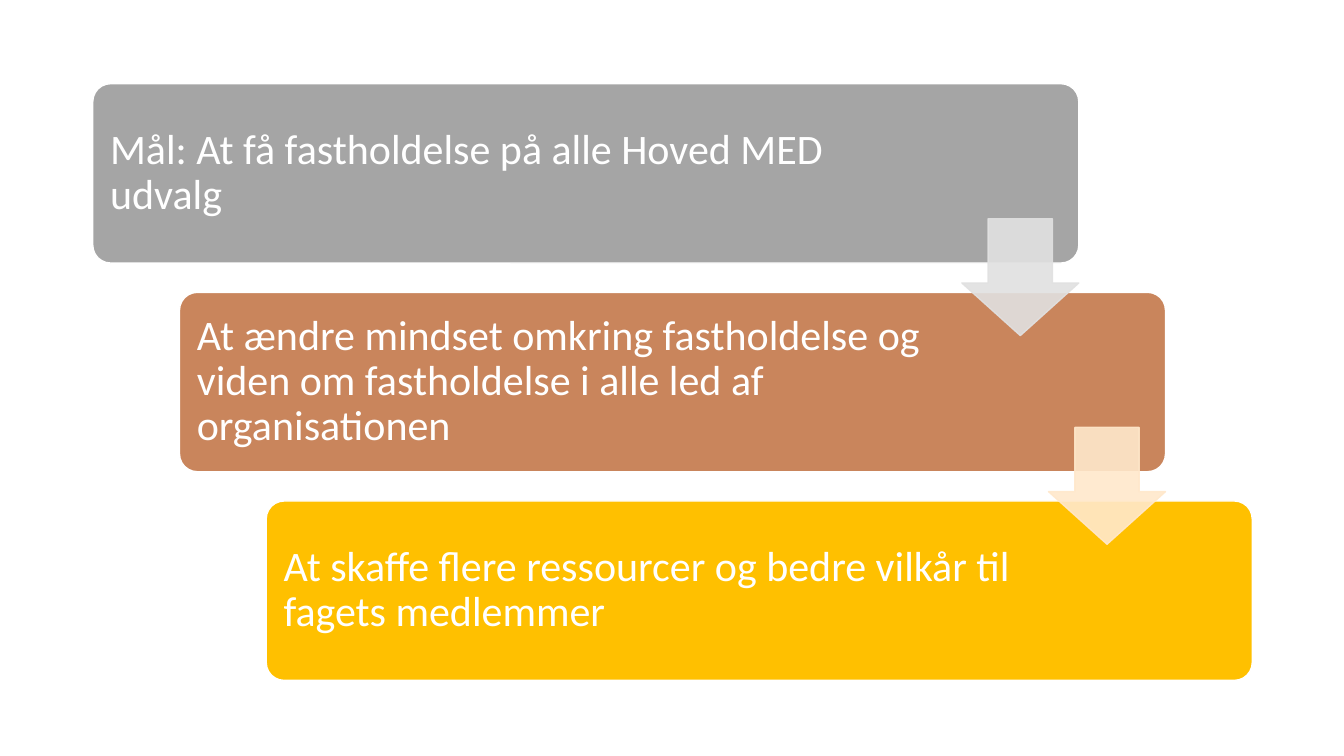
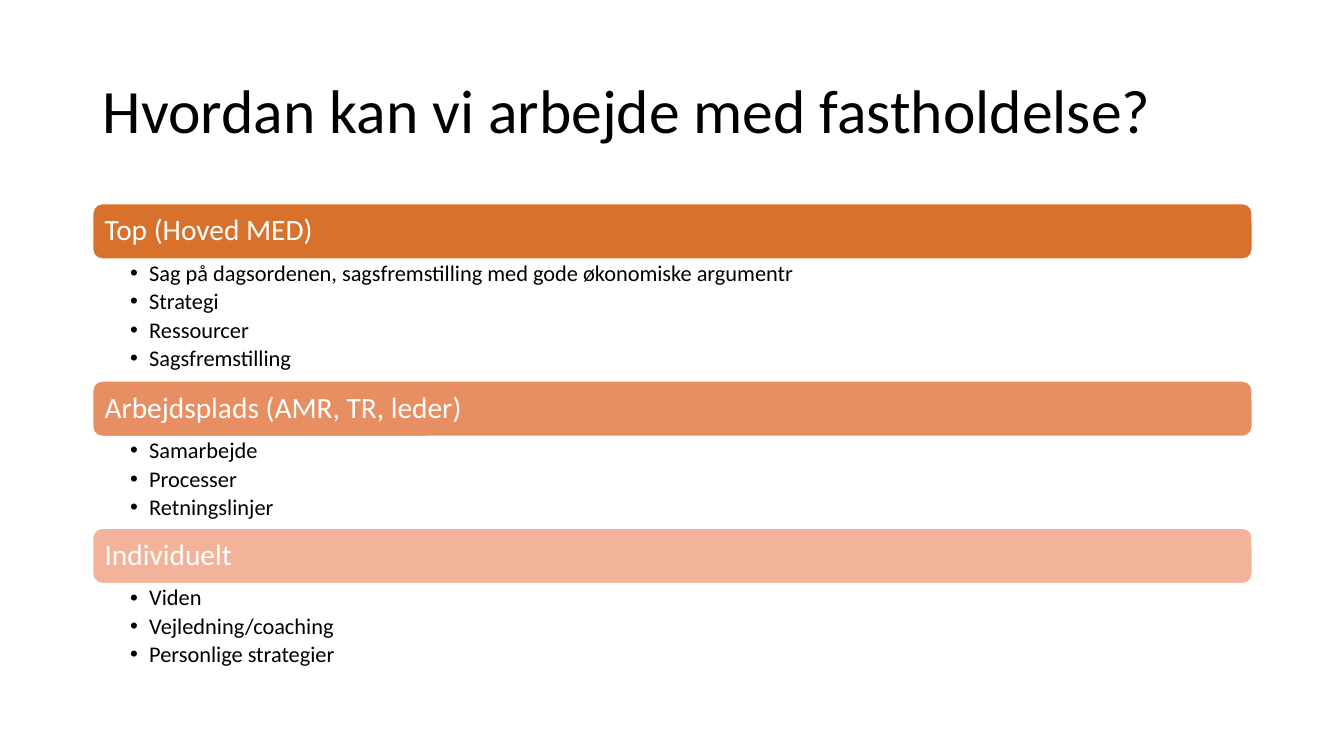
from pptx import Presentation
from pptx.dml.color import RGBColor
from pptx.enum.shapes import MSO_SHAPE
from pptx.enum.text import MSO_ANCHOR, PP_ALIGN
from pptx.oxml.ns import qn
from pptx.util import Inches, Pt
from lxml import etree

ROUNDED = MSO_SHAPE.ROUNDED_RECTANGLE
DOWN_ARROW = MSO_SHAPE.DOWN_ARROW
MIDDLE, TOP = MSO_ANCHOR.MIDDLE, MSO_ANCHOR.TOP
LEFT = PP_ALIGN.LEFT

FONT = "Calibri"
WHITE, BLACK = "FFFFFF", "000000"
MARGIN, CONTENT_WIDTH = 0.92, 11.5

STEP_WIDTH, STEP_HEIGHT = 9.78, 1.78
STEP_TOP, STEP_SHIFT, STEP_PITCH = 0.83, 0.86, 2.07
STEP_INSETS = (0.12, 0.12, 2.15, 0.12)
ARROW_SIZE, ARROW_SHIFT, ARROW_DROP = 1.16, 8.62, 1.34
STEPS = [
    ("Mål: At få fastholdelse på alle Hoved MED udvalg", "A5A5A5"),
    ("At ændre mindset omkring fastholdelse og viden om fastholdelse "
     "i alle led af organisationen", "C9855C"),
    ("At skaffe flere ressourcer og bedre vilkår til fagets medlemmer",
     "FFC000"),
]
ARROW_COLOURS = ["E1E1E1", "FFE8CB"]

TITLE = "Hvordan kan vi arbejde med fastholdelse?"
BAR_TOP, BAR_HEIGHT, BULLET_PITCH = 2.02, 0.55, 0.3
BAR_INSETS = (0.09, 0.09, 0.09, 0.09)
LIST_INSETS = (0.37, 0.03, 0.16, 0.03)
LEVELS = [
    ("Top (Hoved MED)", "D7712C", [
        "Sag på dagsordenen, sagsfremstilling med gode økonomiske argumentr",
        "Strategi", "Ressourcer", "Sagsfremstilling"]),
    ("Arbejdsplads (AMR, TR, leder)", "E78F62",
     ["Samarbejde", "Processer", "Retningslinjer"]),
    ("Individuelt", "F3B39B",
     ["Viden", "Vejledning/coaching", "Personlige strategier"]),
]


def colour(code):
    return RGBColor.from_string(code)


def set_attributes(target, values):
    for name, value in values.items():
        setattr(target, name, value)


def add_block(page, kind, area, fill, line, adjustments):
    block = page.shapes.add_shape(kind, *map(Inches, area))
    block.shadow.inherit = False
    block.fill.solid()
    block.fill.fore_color.rgb = colour(fill)
    block.line.color.rgb = colour(line)
    block.line.width = Pt(1)
    for index, value in enumerate(adjustments):
        block.adjustments[index] = value
    return block


def make_translucent(block, percent):
    """Give both the fill and the outline this opacity."""
    for tag in block._element.spPr.iter(qn("a:srgbClr")):
        etree.SubElement(tag, qn("a:alpha"), val=str(percent * 1000))


def add_bullet(para):
    properties = para._p.get_or_add_pPr()
    properties.set("marL", str(Inches(0.19)))
    properties.set("indent", str(-Inches(0.19)))
    etree.SubElement(properties, qn("a:buFont"), typeface="Arial")
    etree.SubElement(properties, qn("a:buChar"), char="•")


def write(box, lines, size, ink, insets, anchor=MIDDLE, bullets=False):
    frame = box.text_frame
    sides = ("margin_left", "margin_top", "margin_right", "margin_bottom")
    set_attributes(frame, dict(zip(sides, map(Inches, insets))))
    set_attributes(frame, {"word_wrap": True, "vertical_anchor": anchor})
    for index, line in enumerate(lines):
        para = frame.add_paragraph() if index else frame.paragraphs[0]
        set_attributes(para, {"alignment": LEFT, "line_spacing": 0.9})
        if bullets:
            set_attributes(para, {"level": 1, "space_after": Pt(3)})
            add_bullet(para)
        span = para.add_run()
        span.text = line
        set_attributes(span.font, {"name": FONT, "size": Pt(size)})
        span.font.color.rgb = colour(ink)


def add_text(page, area, lines, size, insets, **layout):
    box = page.shapes.add_textbox(*map(Inches, area))
    write(box, lines, size, BLACK, insets, **layout)


def build_goals(page):
    corners = [(MARGIN + i * STEP_SHIFT, STEP_TOP + i * STEP_PITCH)
               for i in range(len(STEPS))]
    for (left, top), (text, fill) in zip(corners, STEPS):
        area = (left, top, STEP_WIDTH, STEP_HEIGHT)
        step = add_block(page, ROUNDED, area, fill, WHITE, [0.1])
        write(step, [text], 30, WHITE, STEP_INSETS)
    for (left, top), fill in zip(corners, ARROW_COLOURS):
        area = (left + ARROW_SHIFT, top + ARROW_DROP, ARROW_SIZE, ARROW_SIZE)
        arrow = add_block(page, DOWN_ARROW, area, fill, fill, [0.55, 0.45])
        make_translucent(arrow, 90)


def build_levels(page):
    add_text(page, (MARGIN, 0.4, CONTENT_WIDTH, 1.45), [TITLE], 44,
             (0.1, 0.05, 0.1, 0.05))
    top = BAR_TOP
    for heading, fill, items in LEVELS:
        area = (MARGIN, top, CONTENT_WIDTH, BAR_HEIGHT)
        bar = add_block(page, ROUNDED, area, fill, WHITE, [0.17])
        write(bar, [heading], 21, WHITE, BAR_INSETS)
        top += BAR_HEIGHT
        height = len(items) * BULLET_PITCH + 0.01
        add_text(page, (MARGIN, top, CONTENT_WIDTH, height), items, 16,
                 LIST_INSETS, anchor=TOP, bullets=True)
        top += height


def main():
    deck = Presentation()
    set_attributes(deck, {"slide_width": Inches(13.33),
                          "slide_height": Inches(7.5)})
    blank = deck.slide_layouts[6]
    for build in (build_goals, build_levels):
        build(deck.slides.add_slide(blank))
    deck.save("out.pptx")


if __name__ == "__main__":
    main()
